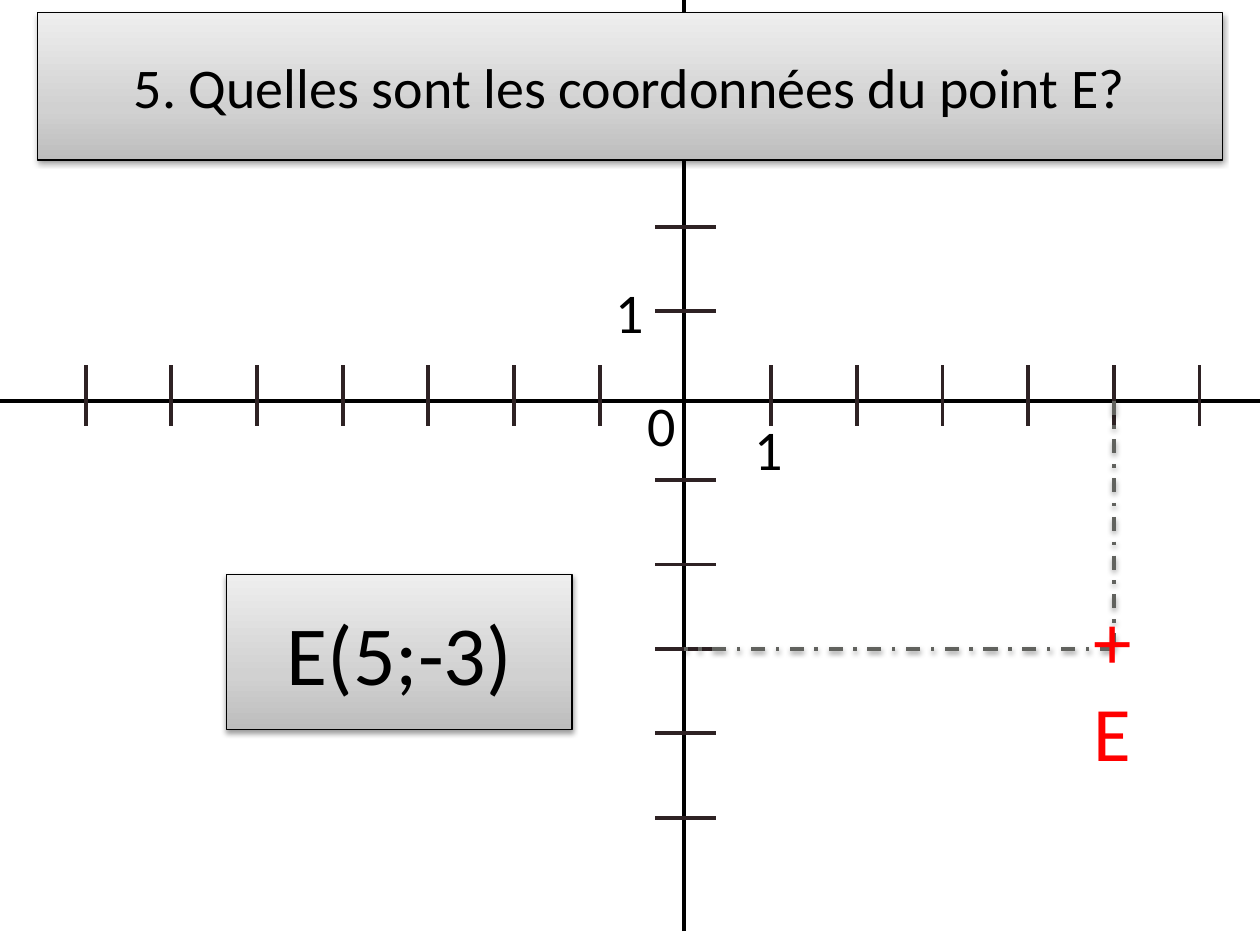
from copy import deepcopy

from lxml.etree import SubElement
from pptx import Presentation
from pptx.dml.color import RGBColor
from pptx.enum.dml import MSO_LINE
from pptx.enum.shapes import MSO_CONNECTOR, MSO_SHAPE
from pptx.enum.text import MSO_ANCHOR, MSO_AUTO_SIZE, PP_ALIGN
from pptx.oxml.ns import qn
from pptx.util import Inches, Pt

BLACK, TICK, GUIDE, RED = "000000", "2E2224", "61625E", "FF0000"
PANEL_STOPS = [(0, "BDBDBD"), (0.35, "D1D1D1"), (1, "EEEEEE")]
ORIGIN_X, ORIGIN_Y = 5.43, 3.18
# The graduations sit slightly off the axes' crossing
GRID_X, GRID_Y = 5.44, 3.14
STEP_X, STEP_Y = 0.68, 0.67
TICK_HALF = 0.24


def rgb(hex_code):
    return RGBColor.from_string(hex_code)


def grid_x(units):
    return GRID_X + units * STEP_X


def grid_y(units):
    return GRID_Y - units * STEP_Y


def add_soft_shadow(effects):
    shadow = SubElement(effects, qn("a:outerShdw"), blurRad=str(Pt(3.1)),
                        dist=str(Pt(1.6)), dir="5400000", rotWithShape="0")
    tint = SubElement(shadow, qn("a:srgbClr"), val=BLACK)
    SubElement(tint, qn("a:alpha"), val="38000")


def add_line(slide, start, end, color, width, dash=None, shadow=False):
    line = slide.shapes.add_connector(
        MSO_CONNECTOR.STRAIGHT, *map(Inches, start + end))
    line.line.color.rgb = rgb(color)
    line.line.width = Pt(width)
    if dash:
        line.line.dash_style = dash
    effects = SubElement(line._element.spPr, qn("a:effectLst"))
    if shadow:
        add_soft_shadow(effects)


def write(frame, text, size, color, align=PP_ALIGN.LEFT):
    frame.text = text
    for paragraph in frame.paragraphs:
        paragraph.alignment = align
        font = paragraph.runs[0].font
        font.name, font.size = "Calibri", Pt(size)
        font.color.rgb = rgb(color)


def format_panel(panel, box, text, size):
    """Grey gradient panel with a soft shadow and centred text."""
    panel.left, panel.top, panel.width, panel.height = map(Inches, box)
    panel.fill.gradient()
    panel.fill.gradient_angle = 90
    stop_list = panel._element.spPr.find(qn("a:gradFill")).find(qn("a:gsLst"))
    stop_list.append(deepcopy(stop_list[-1]))
    for stop, (position, color) in zip(panel.fill.gradient_stops, PANEL_STOPS):
        stop.position = position
        stop.color.rgb = rgb(color)
    panel.line.color.rgb = rgb(BLACK)
    panel.line.width = Pt(0.75)
    panel.shadow.inherit = False
    add_soft_shadow(panel._element.spPr.find(qn("a:effectLst")))
    frame = panel.text_frame
    frame.word_wrap = True
    frame.auto_size = MSO_AUTO_SIZE.NONE
    frame.vertical_anchor = MSO_ANCHOR.MIDDLE
    write(frame, text, size, BLACK, PP_ALIGN.CENTER)


def add_label(slide, box, text, size, color):
    label = slide.shapes.add_textbox(*map(Inches, box))
    label.text_frame.word_wrap = True
    label.text_frame.auto_size = MSO_AUTO_SIZE.SHAPE_TO_FIT_TEXT
    write(label.text_frame, text, size, color)


def add_axes(slide):
    add_line(slide, (-0.23, ORIGIN_Y), (11.38, ORIGIN_Y), BLACK, 2.25)
    add_line(slide, (ORIGIN_X, 7.39), (ORIGIN_X, -1.07), BLACK, 2.25)
    for units in range(-7, 7):
        if units:
            x = grid_x(units)
            add_line(slide, (x, GRID_Y - TICK_HALF), (x, GRID_Y + TICK_HALF),
                     TICK, 2.25)
    for units in range(-5, 3):
        if units:
            y = grid_y(units)
            add_line(slide, (GRID_X - TICK_HALF, y), (GRID_X + TICK_HALF, y),
                     TICK, 2.25)


def add_axis_labels(slide):
    for text, left, top in [("1", 4.79, 2.15), ("1", 5.89, 3.24),
                            ("0", 5.04, 3.05)]:
        add_label(slide, (left, top, 0.5, 0.64), text, 32, BLACK)


def add_point(slide, name, units_x, units_y):
    """Dashed guides from both axes, with a cross and a name at their meeting."""
    x, y = grid_x(units_x), grid_y(units_y)
    for start, end in [((x, ORIGIN_Y), (x, y)), ((x, y), (ORIGIN_X, y))]:
        add_line(slide, start, end, GUIDE, 2, MSO_LINE.DASH_DOT, shadow=True)
    add_label(slide, (x - 0.26, y - 0.5, 1.52, 1.58), f"+\n{name}", 44, RED)


def main():
    deck = Presentation()
    deck.slide_width, deck.slide_height = Inches(10), Inches(7.5)
    slide = deck.slides.add_slide(deck.slide_layouts[5])
    add_axes(slide)
    title = slide.shapes.title
    format_panel(title, (0.3, 0.1, 9.4, 1.17),
                 "5. Quelles sont les coordonnées du point E?", 32)
    # Bring the title in front of the axes
    slide.shapes._spTree.append(title._element)
    add_point(slide, "E", 5, -3)
    answer = slide.shapes.add_shape(MSO_SHAPE.RECTANGLE, 0, 0, 0, 0)
    format_panel(answer, (1.8, 4.56, 2.74, 1.23), "E(5;-3)", 48)
    add_axis_labels(slide)
    deck.save("out.pptx")


if __name__ == "__main__":
    main()
